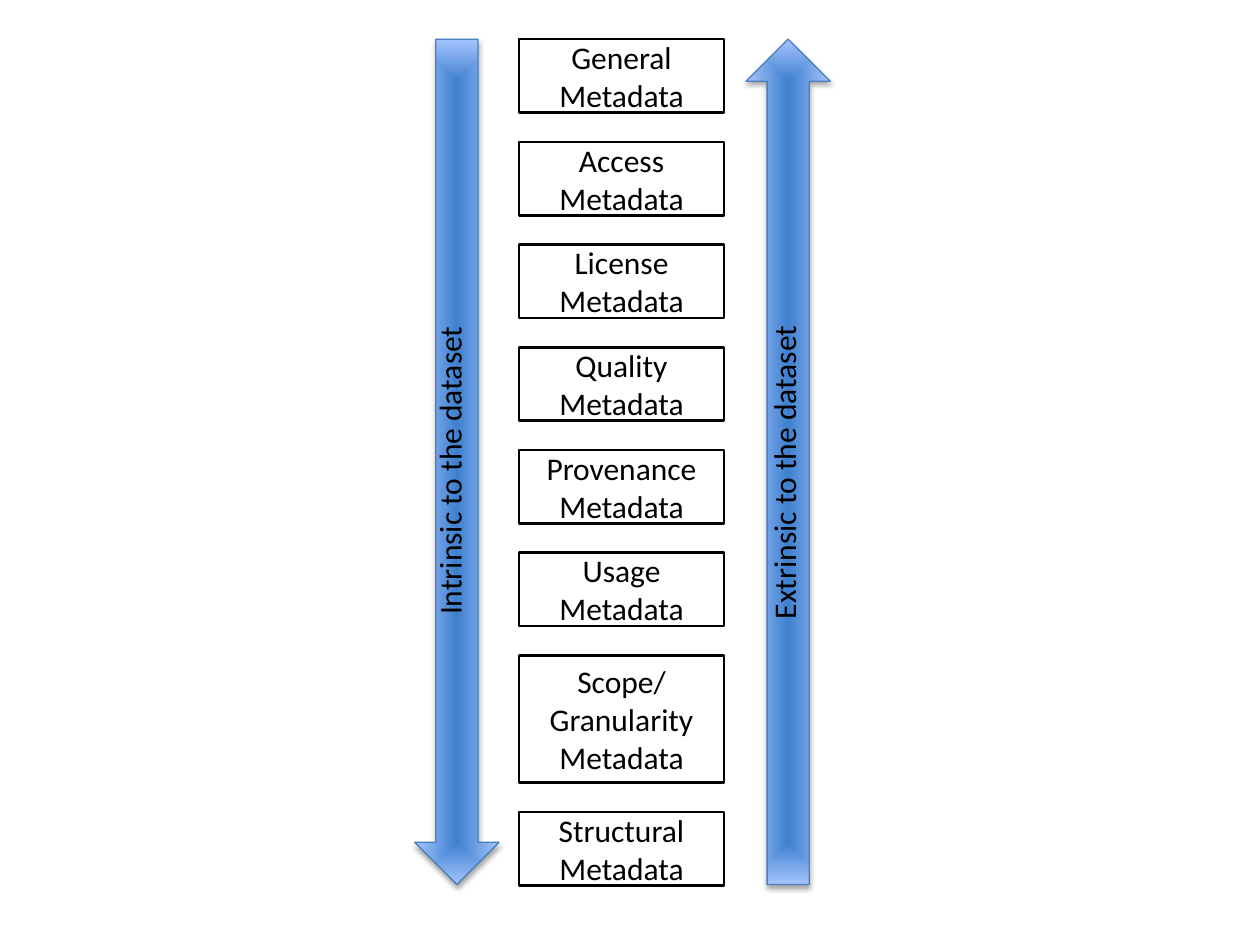
import pptx
import pptx.util
import pptx.dml.color
import pptx.enum.shapes
import pptx.enum.text
import pptx.oxml
import pptx.oxml.ns

Cm = pptx.util.Cm
Pt = pptx.util.Pt
RGBColor = pptx.dml.color.RGBColor
RECTANGLE = pptx.enum.shapes.MSO_SHAPE.RECTANGLE
UP_ARROW = pptx.enum.shapes.MSO_SHAPE.UP_ARROW

BLACK = RGBColor(0x00, 0x00, 0x00)
ARROW_CORE = RGBColor(0x3F, 0x80, 0xCE)
ARROW_RIM = RGBColor(0xA4, 0xC4, 0xFF)
ARROW_LINE = RGBColor(0x4B, 0x7E, 0xBC)

NAMESPACE = pptx.oxml.ns.nsdecls("a")
RIM_GRADIENT = (
    f'<a:path {NAMESPACE} path="shape">'
    '<a:fillToRect l="50000" t="50000" r="50000" b="50000"/></a:path>'
)
DROP_SHADOW = (
    f'<a:outerShdw {NAMESPACE} blurRad="{Pt(3.1)}" dist="{Pt(1.8)}" '
    'dir="5400000" rotWithShape="0"><a:srgbClr val="000000">'
    '<a:alpha val="35000"/></a:srgbClr></a:outerShdw>'
)


def write_lines(frame, lines, alignment):
    frame.text = "\n".join(lines)
    for paragraph in frame.paragraphs:
        paragraph.alignment = alignment
        paragraph.font.name = "Calibri"
        paragraph.font.size = Pt(18)
        paragraph.font.color.rgb = BLACK


presentation = pptx.Presentation()
presentation.slide_width = Cm(25.4)
presentation.slide_height = Cm(19.05)
slide = presentation.slides.add_slide(presentation.slide_layouts[6])
diagram = slide.shapes.add_group_shape()

TOP = 0.79
GAP = 0.59
categories = [
    (["General", "Metadata"], 1.48),
    (["Access", "Metadata"], 1.48),
    (["License", "Metadata"], 1.48),
    (["Quality Metadata"], 1.48),
    (["Provenance", "Metadata"], 1.48),
    (["Usage", "Metadata"], 1.48),
    (["Scope/Granularity", "Metadata"], 2.57),
    (["Structural", "Metadata"], 1.48),
]
category_top = TOP
for lines, height in categories:
    category = diagram.shapes.add_shape(
        RECTANGLE, Cm(10.46), Cm(category_top), Cm(4.14), Cm(height)
    )
    category.shadow.inherit = False
    category.fill.background()
    category.line.color.rgb = BLACK
    category.line.width = Pt(1.5)
    category.text_frame.word_wrap = True
    category.text_frame.vertical_anchor = pptx.enum.text.MSO_ANCHOR.MIDDLE
    write_lines(category.text_frame, lines, pptx.enum.text.PP_ALIGN.CENTER)
    category_top += height + GAP

directions = [
    ("Extrinsic to the dataset", 15.04, 0, 12.55, 8.97, 6.5),
    ("Intrinsic to the dataset", 8.36, 180, 5.84, 8.92, 6.43),
]
for wording, arrow_left, turn, label_left, label_top, label_width in directions:
    arrow = diagram.shapes.add_shape(
        UP_ARROW, Cm(arrow_left), Cm(TOP), Cm(1.7), Cm(17.04)
    )
    arrow.rotation = turn
    arrow.fill.gradient()
    core, rim = arrow.fill.gradient_stops
    core.position, core.color.rgb = 0, ARROW_CORE
    rim.position, rim.color.rgb = 1, ARROW_RIM
    linear = arrow.element.spPr.find(".//" + pptx.oxml.ns.qn("a:lin"))
    linear.getparent().replace(linear, pptx.oxml.parse_xml(RIM_GRADIENT))
    arrow.line.color.rgb = ARROW_LINE
    arrow.line.width = Pt(0.75)
    arrow.shadow.inherit = False
    effects = arrow.element.spPr.find(pptx.oxml.ns.qn("a:effectLst"))
    effects.append(pptx.oxml.parse_xml(DROP_SHADOW))

    label = diagram.shapes.add_textbox(
        Cm(label_left), Cm(label_top), Cm(label_width), Cm(1.02)
    )
    label.rotation = 270
    label.text_frame.word_wrap = False
    label.text_frame.auto_size = pptx.enum.text.MSO_AUTO_SIZE.SHAPE_TO_FIT_TEXT
    write_lines(label.text_frame, [wording], pptx.enum.text.PP_ALIGN.LEFT)

presentation.save("out.pptx")
